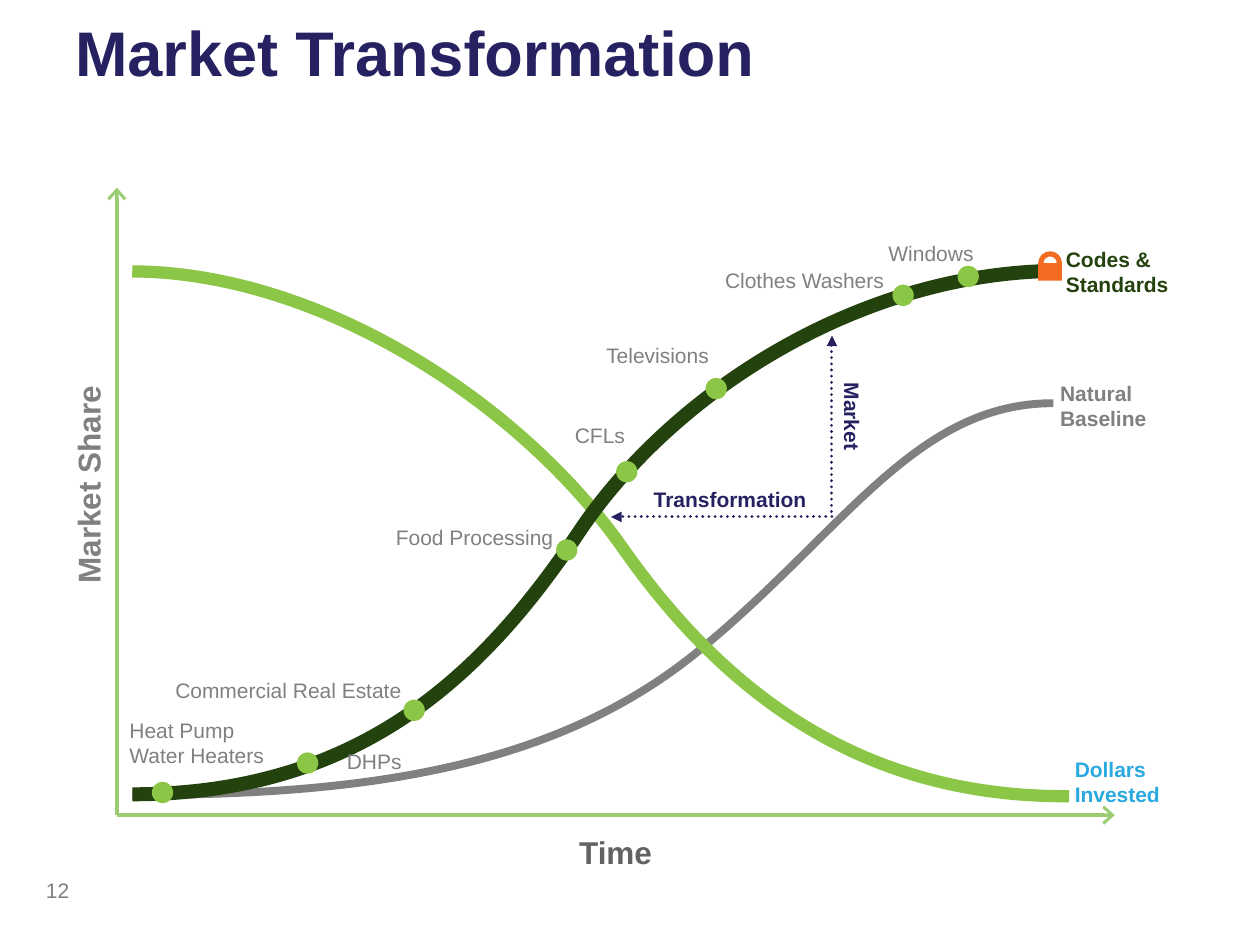
import pptx
import pptx.util
import pptx.dml.color
import pptx.enum.dml
import pptx.enum.shapes
import pptx.enum.text
import pptx.oxml
import pptx.oxml.ns

Pt = pptx.util.Pt
RGB = pptx.dml.color.RGBColor
ALIGN = pptx.enum.text.PP_ALIGN
SHAPE = pptx.enum.shapes.MSO_SHAPE
qn = pptx.oxml.ns.qn
SPACE = pptx.oxml.ns.nsdecls("a")

NAVY = RGB(0x26, 0x22, 0x62)
GRAY = RGB(0x80, 0x80, 0x80)
SLATE = RGB(0x62, 0x62, 0x62)
LIME = RGB(0x8C, 0xC6, 0x46)
DOT = RGB(0x8C, 0xC6, 0x47)
PALE = RGB(0x9A, 0xCD, 0x72)
DARK = RGB(0x24, 0x42, 0x0E)
BLUE = RGB(0x2A, 0xA9, 0xE0)
ORANGE = RGB(0xF3, 0x6C, 0x21)

DOT_SIZE = 12.2
BEND = 0.55  # handle length of a quarter circle

# Curves: start point, then two cubic segments
BASE = [(75.6, 454.3), (205.9, 454.3), (316.1, 439.9), (398.9, 372.2),
        (482.4, 303.8), (522.7, 230.4), (601.9, 230.4)]
COST = [(75.6, 155.1), (182.2, 155.5), (297.4, 229.7), (356.4, 313.9),
        (416.2, 398.9), (495.4, 455.8), (611, 455)]
SHARE = [(75.6, 453.9), (205.9, 453.9), (276.5, 385.2), (330.5, 304.6),
         (383.8, 224.6), (491, 155.5), (604.8, 154.8)]

# Product labels: text, left, top, width, then the dot's left and top
ITEMS = [
    ("Windows", 480.6, 134.2, 82.8, 547.2, 151.9),
    ("Clothes Washers", 351.7, 149.3, 160.6, 510, 162.7),
    ("Televisions", 231.5, 192.2, 180.7, 403.2, 216),
    ("CFLs", 272, 237.9, 92.2, 352.1, 263.5),
    ("Food Processing", 180.7, 296.3, 142.6, 317.8, 308.2),
    ("Commercial Real Estate", 49.4, 383.8, 187.2, 230.6, 399.8),
    ("DHPs", 119.2, 424.1, 117.4, 169.7, 430),
    ("Heat Pump Water Heaters", 66.9, 406.4, 108, 86.8, 446.8),
]


def style(para, size, color, bold, align):
    para.alignment = align
    look = {"name": "Arial", "size": Pt(size), "bold": bold}
    for key, value in look.items():
        setattr(para.font, key, value)
    para.font.color.rgb = color


def label(slide, text, box, color=GRAY, size=12, bold=True,
          align=ALIGN.LEFT, turn=0):
    item = slide.shapes.add_textbox(*map(Pt, box))
    item.rotation = turn
    item.text_frame.word_wrap = True
    item.text_frame.text = text
    style(item.text_frame.paragraphs[0], size, color, bold, align)


def paint(shape, color):
    shape.shadow.inherit = False
    shape.fill.solid()
    shape.fill.fore_color.rgb = color
    shape.line.fill.background()


def solid(slide, kind, box, color):
    paint(slide.shapes.add_shape(kind, *map(Pt, box)), color)


def trace(slide, knots, plan, close=False):
    """Draw knots as an outline; plan has C for a cubic, L for a line."""
    spots = [(Pt(x), Pt(y)) for x, y in knots]
    pen = slide.shapes.build_freeform(*spots[0])
    pen.add_line_segments(spots[1:], close=close)
    shape = pen.convert_to_shape()
    steps = iter(list(shape._element.iter(qn("a:lnTo"))))
    for kind in plan:
        first = next(steps)
        if kind == "C":
            bend = pptx.oxml.parse_xml(f"<a:cubicBezTo {SPACE}/>")
            first.addprevious(bend)
            for step in (first, next(steps), next(steps)):
                bend.append(step[0])
                step.getparent().remove(step)
    return shape


def curve(slide, knots, color, width):
    shape = trace(slide, knots, "CC")
    shape.shadow.inherit = False
    shape.fill.background()
    shape.line.color.rgb = color
    shape.line.width = Pt(width)


def arrow(slide, start, end, color, width, head, size="med", dash=None):
    item = slide.shapes.add_connector(
        pptx.enum.shapes.MSO_CONNECTOR.STRAIGHT, *map(Pt, start + end))
    item.line.color.rgb = color
    item.line.width = Pt(width)
    edge = item.line._get_or_add_ln()
    if dash:
        item.line.dash_style = dash
        edge.set("cap", "rnd")
    edge.append(pptx.oxml.parse_xml(
        f'<a:tailEnd {SPACE} type="{head}" w="{size}" len="med"/>'))
    item._element.spPr.append(pptx.oxml.parse_xml(f"<a:effectLst {SPACE}/>"))


def arch(x, y, r, side):
    """Half circle over (x, y), from the given side (-1 is left)."""
    a, b = side * r, side * r * BEND
    h = r * BEND
    return [(x + a, y), (x + a, y - h), (x + b, y - r), (x, y - r),
            (x - b, y - r), (x - a, y - h), (x - a, y)]


def lock(slide):
    x, y = 600.1, 150.4
    solid(slide, SHAPE.RECTANGLE, (x - 6.8, y, 13.6, 10), ORANGE)
    ring = arch(x, y, 6.8, -1) + arch(x, y, 3.8, 1)
    paint(trace(slide, ring, "CCLCC", True), ORANGE)


def title(slide, text):
    item = slide.shapes.title
    place = {"left": 35.7, "top": 0, "width": 659.5, "height": 59}
    for key, value in place.items():
        setattr(item, key, Pt(value))
    frame = item.text_frame
    frame.text = text
    frame.margin_right = 0
    frame.vertical_anchor = pptx.enum.text.MSO_ANCHOR.MIDDLE
    style(frame.paragraphs[0], 36, NAVY, True, ALIGN.LEFT)


def main():
    deck = pptx.Presentation()
    deck.slide_width, deck.slide_height = Pt(720), Pt(540)
    slide = deck.slides.add_slide(deck.slide_layouts[5])
    title(slide, "Market Transformation")
    label(slide, "12", (19.2, 498.2, 149.8, 23.8), bold=False)

    # Natural baseline and axis names
    curve(slide, BASE, GRAY, 4.5)
    label(slide, "Natural Baseline", (598.7, 213.8, 76.3, 36))
    label(slide, "Market Share", (-14.4, 261.4, 129.6, 28.8), size=18, turn=270)
    label(slide, "Time", (272.2, 472.3, 159.1, 28.8), SLATE, 18,
          align=ALIGN.CENTER)

    # Gap between the two market curves
    dots = pptx.enum.dml.MSO_LINE.ROUND_DOT
    for start, end in (((475.4, 295.4), (349.2, 295.4)),
                       ((475.4, 292.3), (475.4, 191.8))):
        arrow(slide, start, end, NAVY, 1.75, "triangle", dash=dots)
    label(slide, "Transformation", (351.7, 274.3, 131, 21.6), NAVY,
          align=ALIGN.CENTER)
    label(slide, "Market", (421.9, 227.2, 130.3, 21.6), NAVY,
          align=ALIGN.CENTER, turn=90)

    # Dollars invested
    curve(slide, COST, LIME, 7)
    label(slide, "Dollars Invested", (607.1, 428.7, 82.1, 36.7), BLUE)

    # Axes
    for end in ((66.8, 107.3), (637, 465.8)):
        arrow(slide, (66.8, 465.8), end, PALE, 2, "arrow", "lg")

    # Market share curve with its products
    curve(slide, SHARE, DARK, 8)
    for text, left, top, width, x, y in ITEMS:
        two = text.startswith("Heat")
        label(slide, text, (left, top, width, 36 if two else 21.6), bold=False,
              align=ALIGN.LEFT if two else ALIGN.RIGHT)
        solid(slide, SHAPE.OVAL, (x, y, DOT_SIZE, DOT_SIZE), DOT)

    # Codes and standards
    label(slide, "Codes & Standards", (602, 137.1, 87.1, 36), DARK)
    lock(slide)
    deck.save("out.pptx")


if __name__ == "__main__":
    main()
